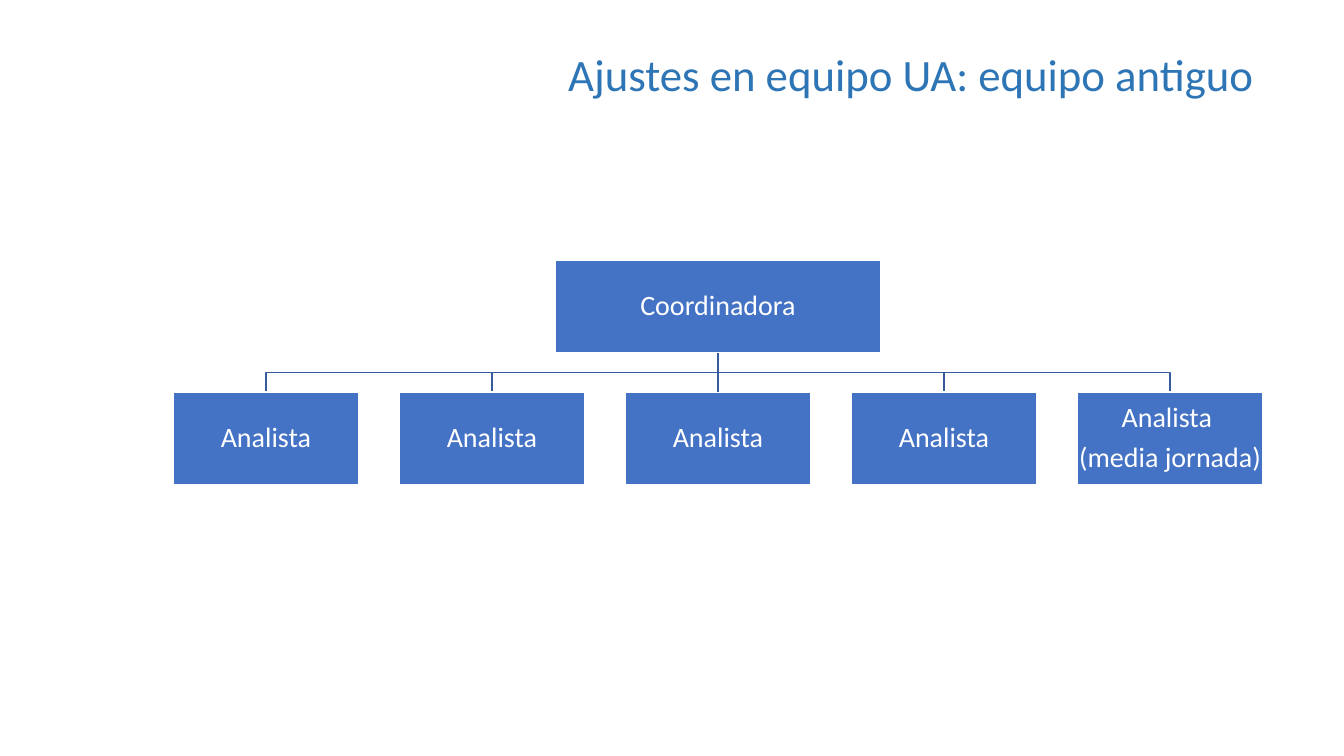
from dataclasses import dataclass

from lxml import etree
from pptx import Presentation
from pptx.dml.color import RGBColor
from pptx.enum.shapes import MSO_CONNECTOR, MSO_SHAPE
from pptx.enum.text import MSO_ANCHOR, PP_ALIGN
from pptx.oxml.ns import qn
from pptx.util import Emu, Pt

RECTANGLE = MSO_SHAPE.RECTANGLE
STRAIGHT = MSO_CONNECTOR.STRAIGHT
MIDDLE = MSO_ANCHOR.MIDDLE
CENTER, RIGHT = PP_ALIGN.CENTER, PP_ALIGN.RIGHT
TOP_SIDE, BOTTOM_SIDE = 0, 2


@dataclass(frozen=True)
class Theme:
    font: str = "Calibri"
    title_color: RGBColor = RGBColor(0x2E, 0x75, 0xB6)
    box_fill: RGBColor = RGBColor(0x44, 0x72, 0xC4)
    box_text: RGBColor = RGBColor(0xFF, 0xFF, 0xFF)
    box_border: RGBColor = RGBColor(0xFF, 0xFF, 0xFF)
    branch: RGBColor = RGBColor(0x36, 0x5B, 0x9D)
    title_size: Pt = Pt(32)
    role_size: Pt = Pt(20)
    role_gap: Pt = Pt(7)
    line_width: Pt = Pt(1)


THEME = Theme()

SLIDE_WIDTH, SLIDE_HEIGHT = 1344, 756
TEAM_LEFT, TEAM_TOP, TEAM_PITCH = 173, 392, 226
ANALYST_WIDTH, BOX_HEIGHT = 186, 93
COORDINATOR_LEFT, COORDINATOR_TOP, COORDINATOR_WIDTH = 555, 260, 326
TEAM = ["Analista"] * 4 + ["Analista \n(media jornada)"]


def px(length):
    return Emu(round(length * 914400 / 100.8))


def write(frame, text, size, color, align, gap=None):
    frame.word_wrap = True
    frame.vertical_anchor = MIDDLE
    frame.text = text
    for paragraph in frame.paragraphs:
        paragraph.alignment = align
        paragraph.line_spacing = 0.9
        paragraph.space_after = gap
        paragraph.font.name = THEME.font
        paragraph.font.size = size
        paragraph.font.color.rgb = color


def add_title(slide, text):
    title = slide.shapes.add_textbox(px(172), px(44), px(1092), px(66))
    write(title.text_frame, text, THEME.title_size, THEME.title_color, RIGHT)


def add_role(slide, role, left, top, width):
    box = slide.shapes.add_shape(RECTANGLE, px(left), px(top), px(width), px(BOX_HEIGHT))
    box.shadow.inherit = False
    box.fill.solid()
    box.fill.fore_color.rgb = THEME.box_fill
    box.line.color.rgb = THEME.box_border
    box.line.width = THEME.line_width
    frame = box.text_frame
    frame.margin_left = frame.margin_right = px(1)
    frame.margin_top = frame.margin_bottom = px(1)
    write(frame, role, THEME.role_size, THEME.box_text, CENTER, THEME.role_gap)
    return box


def style_branch(branch):
    branch.line.color.rgb = THEME.branch
    branch.line.width = THEME.line_width


def add_straight_branch(slide, coordinator, analyst):
    branch = slide.shapes.add_connector(STRAIGHT, 0, 0, 0, 0)
    branch.begin_connect(coordinator, BOTTOM_SIDE)
    branch.end_connect(analyst, TOP_SIDE)
    style_branch(branch)
    etree.SubElement(branch.element.spPr, qn("a:effectLst"))


def add_bent_branch(slide, start_x, end_x):
    start_y = COORDINATOR_TOP + BOX_HEIGHT
    bend_y = (start_y + TEAM_TOP) / 2
    outline = slide.shapes.build_freeform(px(start_x), px(start_y))
    corners = [(start_x, bend_y), (end_x, bend_y), (end_x, TEAM_TOP)]
    outline.add_line_segments([(px(x), px(y)) for x, y in corners], close=False)
    branch = outline.convert_to_shape()
    branch.shadow.inherit = False
    branch.fill.background()
    style_branch(branch)


def main():
    deck = Presentation()
    deck.slide_width, deck.slide_height = px(SLIDE_WIDTH), px(SLIDE_HEIGHT)
    slide = deck.slides.add_slide(deck.slide_layouts[6])

    add_title(slide, "Ajustes en equipo UA: equipo antiguo")

    # Bent branches lie behind the boxes
    coordinator_x = COORDINATOR_LEFT + COORDINATOR_WIDTH // 2
    analyst_lefts = [TEAM_LEFT + i * TEAM_PITCH for i in range(len(TEAM))]
    for left in analyst_lefts:
        analyst_x = left + ANALYST_WIDTH // 2
        if analyst_x != coordinator_x:
            add_bent_branch(slide, coordinator_x, analyst_x)

    # Coordinator and her team
    coordinator = add_role(slide, "Coordinadora", COORDINATOR_LEFT,
                           COORDINATOR_TOP, COORDINATOR_WIDTH)
    analysts = [add_role(slide, role, left, TEAM_TOP, ANALYST_WIDTH)
                for role, left in zip(TEAM, analyst_lefts)]

    # The middle analyst sits straight below the coordinator
    add_straight_branch(slide, coordinator, analysts[len(TEAM) // 2])

    deck.save("out.pptx")


if __name__ == "__main__":
    main()
